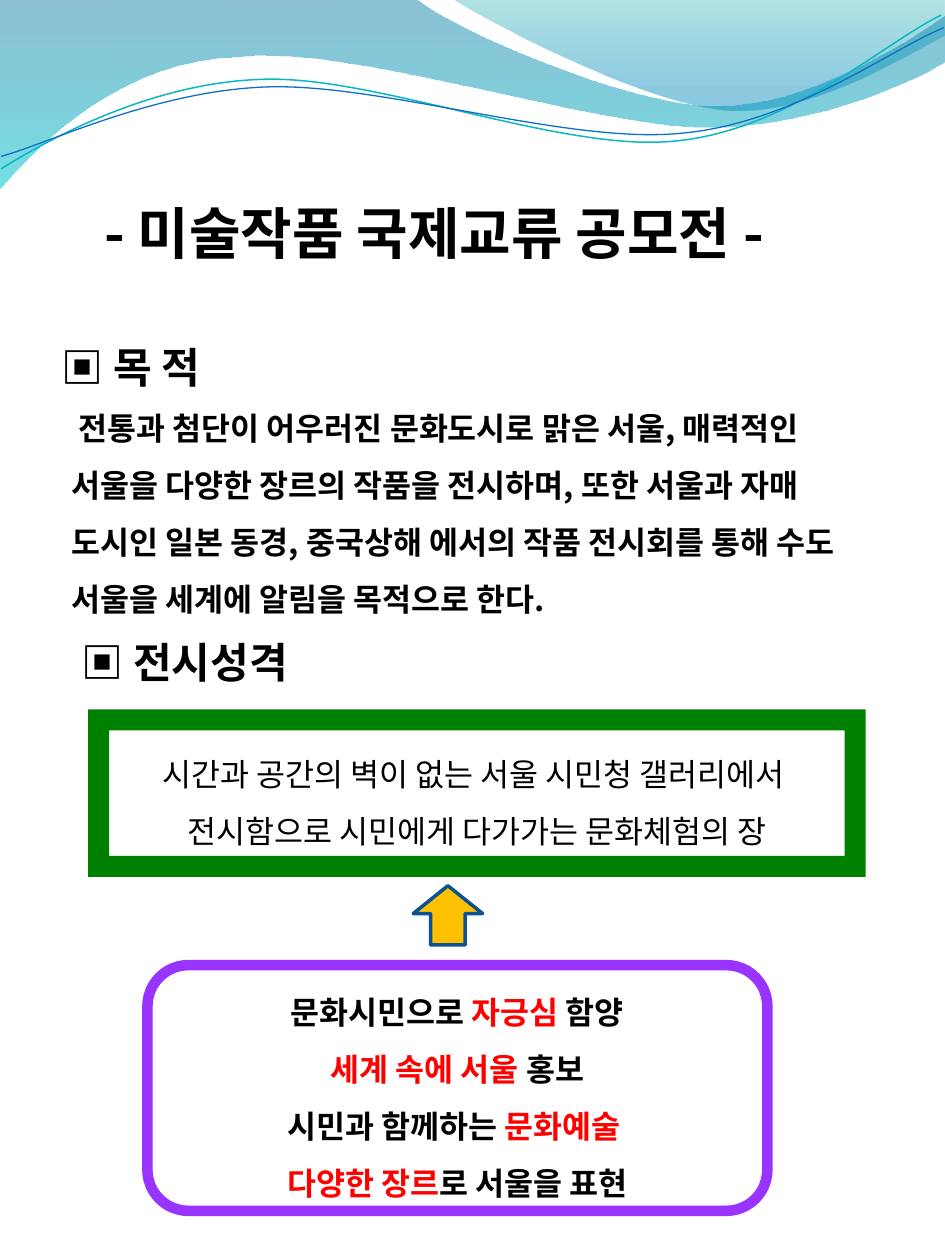
from typing import NamedTuple, Optional

import pptx
import pptx.dml.color
import pptx.enum.shapes
import pptx.enum.text
import pptx.oxml.ns
import pptx.util
from lxml import etree
from pptx.util import Inches

FONT = "Noto Sans CJK KR"
BLACK, RED = "000000", "FF0000"
SHAPE = pptx.enum.shapes.MSO_SHAPE
ALIGN = pptx.enum.text.PP_ALIGN
ANCHOR = pptx.enum.text.MSO_ANCHOR
AUTO = pptx.enum.text.MSO_AUTO_SIZE
qn = pptx.oxml.ns.qn

Point = tuple[float, float]
Run = tuple[str, str]


class Stop(NamedTuple):
    position: float
    color: str
    opacity: int


class Wave(NamedTuple):
    """Start point, then segments: one point is a line, three are a Bézier curve."""
    start: Point
    segments: list[list[Point]]
    stops: Optional[list[Stop]] = None
    line: str = ""
    width: float = 0


class Label(NamedTuple):
    left: float
    top: float
    width: float
    height: float
    text: str
    size: int
    wrap: bool = True
    spacing: float = 1.0


class Panel(NamedTuple):
    kind: SHAPE
    left: float
    top: float
    width: float
    height: float
    fill: str = ""
    line: str = ""
    line_width: float = 0
    bold: bool = False
    paragraphs: tuple[list[Run], ...] = ()
    adjustments: tuple[float, ...] = ()


WAVES = [
    Wave((0, -0.01), [
        [(3.3, -0.01)],
        [(3.57, 0.22), (4.98, 0.84), (5.69, 0.84)],
        [(6.4, 0.84), (7.19, 0.34), (7.5, 0.12)],
        [(7.51, 0.48)],
        [(7.38, 0.58), (6.52, 1.01), (5.59, 1.01)],
        [(4.66, 1), (2.86, 0.37), (1.93, 0.45)],
        [(0.97, 0.47), (0.34, 1.11), (-0.01, 1.51)],
    ], stops=[Stop(0, "0074A1", 45), Stop(1, "00C6CF", 55)]),
    Wave((3.59, -0.01), [
        [(3.82, 0.15), (5.11, 0.82), (5.77, 0.87)],
        [(6.42, 0.92), (7.21, 0.43), (7.5, 0.28)],
        [(7.5, 0)],
    ], stops=[Stop(0, "00A1A9", 30), Stop(0.8, "008BBF", 45)]),
    Wave((0.01, 1.34), [
        [(0.36, 1.12), (1.18, 0.66), (2.07, 0.63)],
        [(2.96, 0.59), (4.45, 1.21), (5.35, 1.12)],
        [(6.26, 1.04), (7.03, 0.33), (7.47, 0.12)],
    ], line="0AB8BF", width=0.85),
    Wave((0.01, 1.24), [
        [(0.36, 1.15), (1.22, 0.72), (2.12, 0.69)],
        [(3.02, 0.66), (4.49, 1.14), (5.38, 1.06)],
        [(6.28, 0.99), (7.05, 0.4), (7.49, 0.22)],
    ], line="0F6FC6", width=0.75),
]

PANELS = [
    Panel(SHAPE.ROUNDED_RECTANGLE, 1.17, 7.66, 4.92, 1.95,
          line="9933FF", line_width=6, bold=True, paragraphs=(
              [("문화시민으로", BLACK), (" 자긍심 ", RED), ("함양", BLACK)],
              [("세계 속에 서울 ", RED), ("홍보", BLACK)],
              [("시민과 함께하는", BLACK), (" 문화예술 ", RED)],
              [("다양한 장르", RED), ("로 서울을 표현", BLACK)],
          )),
    Panel(SHAPE.FRAME, 0.7, 5.63, 6.17, 1.33, fill="008000", paragraphs=(
        [("시간과 공간의 벽이 없는 서울 시민청 갤러리에서 ", BLACK)],
        [("전시함으로 시민에게 다가가는 문화체험의 장", BLACK)],
    )),
    Panel(SHAPE.UP_ARROW, 3.28, 7.03, 0.55, 0.47, fill="FFC000",
          line="0B5292", line_width=2, adjustments=(0.5, 0.47)),
]

LABELS = [
    Label(0.39, 2.66, 1.41, 0.5, "▣ 목 적", 24, wrap=False),
    Label(0.55, 5, 1.96, 0.5, "▣ 전시성격", 24, wrap=False),
    Label(0.47, 3.05, 6.48, 1.92,
          " 전통과 첨단이 어우러진 문화도시로 맑은 서울, 매력적인 서울을 다양한 장르의 "
          "작품을 전시하며, 또한 서울과 자매 도시인 일본 동경, 중국상해 에서의 작품 "
          "전시회를 통해 수도 서울을 세계에 알림을 목적으로 한다.", 18, spacing=1.5),
    Label(0.73, 1.53, 6.22, 0.64, "- 미술작품 국제교류 공모전 -", 32),
]


def rgb(color: str) -> pptx.dml.color.RGBColor:
    return pptx.dml.color.RGBColor.from_string(color)


def set_outline(sp, fill: str, line: str, width: float) -> None:
    """Set solid fill and line; an empty colour means none."""
    sp.shadow.inherit = False
    for part, color in ((sp.fill, fill), (sp.line.fill, line)):
        if color:
            part.solid()
            part.fore_color.rgb = rgb(color)
        else:
            part.background()
    if line:
        sp.line.width = pptx.util.Pt(width)


def set_gradient(sp, stops: list[Stop]) -> None:
    sp.fill.gradient()
    sp.fill.gradient_angle = 270
    for target, stop in zip(sp.fill.gradient_stops, stops):
        target.position = stop.position
        target.color.rgb = rgb(stop.color)
    colors = sp._element.spPr.iter(qn("a:srgbClr"))
    for color, stop in zip(colors, stops):
        etree.SubElement(color, qn("a:alpha")).set("val", str(stop.opacity * 1000))


def bend_segments(sp, segments: list[list[Point]]) -> None:
    """Turn each straight piece that has control points into a Bézier curve."""
    pieces = list(sp._element.spPr.iter(qn("a:lnTo")))
    for piece, segment in zip(pieces, segments):
        if len(segment) == 1:
            continue
        bezier = etree.Element(qn("a:cubicBezTo"))
        for x, y in segment:
            pt = etree.SubElement(bezier, qn("a:pt"))
            pt.set("x", str(Inches(x) - sp.left))
            pt.set("y", str(Inches(y) - sp.top))
        piece.getparent().replace(piece, bezier)


def draw_wave(s, wave: Wave) -> None:
    x, y = wave.start
    builder = s.shapes.build_freeform(Inches(x), Inches(y))
    ends = [(Inches(x), Inches(y)) for x, y in (segment[-1] for segment in wave.segments)]
    builder.add_line_segments(ends, close=bool(wave.stops))
    sp = builder.convert_to_shape()
    bend_segments(sp, wave.segments)
    set_outline(sp, "", wave.line, wave.width)
    if wave.stops:
        set_gradient(sp, wave.stops)


def write_paragraph(p, runs: list[Run], size: int, bold: bool, spacing: float) -> None:
    p.line_spacing = spacing
    p.font.name = FONT
    p.font.size = pptx.util.Pt(size)
    p.font.bold = bold
    etree.SubElement(p.font._element, qn("a:ea")).set("typeface", FONT)
    for text, color in runs:
        r = p.add_run()
        r.text = text
        r.font.color.rgb = rgb(color)


def draw_panel(s, panel: Panel) -> None:
    sp = s.shapes.add_shape(panel.kind, Inches(panel.left), Inches(panel.top),
                            Inches(panel.width), Inches(panel.height))
    set_outline(sp, panel.fill, panel.line, panel.line_width)
    for i, value in enumerate(panel.adjustments):
        sp.adjustments[i] = value
    tf = sp.text_frame
    tf.vertical_anchor = ANCHOR.MIDDLE
    for i, runs in enumerate(panel.paragraphs):
        p = tf.add_paragraph() if i else tf.paragraphs[0]
        p.alignment = ALIGN.CENTER
        write_paragraph(p, runs, 18, panel.bold, 1.5)


def draw_label(s, label: Label) -> None:
    box = s.shapes.add_textbox(Inches(label.left), Inches(label.top),
                               Inches(label.width), Inches(label.height))
    tf = box.text_frame
    tf.word_wrap = label.wrap
    tf.auto_size = AUTO.SHAPE_TO_FIT_TEXT
    write_paragraph(tf.paragraphs[0], [(label.text, BLACK)], label.size, True, label.spacing)


def main() -> None:
    prs = pptx.Presentation()
    prs.slide_width, prs.slide_height = Inches(7.5), Inches(10)
    s = prs.slides.add_slide(prs.slide_layouts[6])
    for items, draw in ((WAVES, draw_wave), (PANELS, draw_panel), (LABELS, draw_label)):
        for item in items:
            draw(s, item)
    prs.save("out.pptx")


if __name__ == "__main__":
    main()
